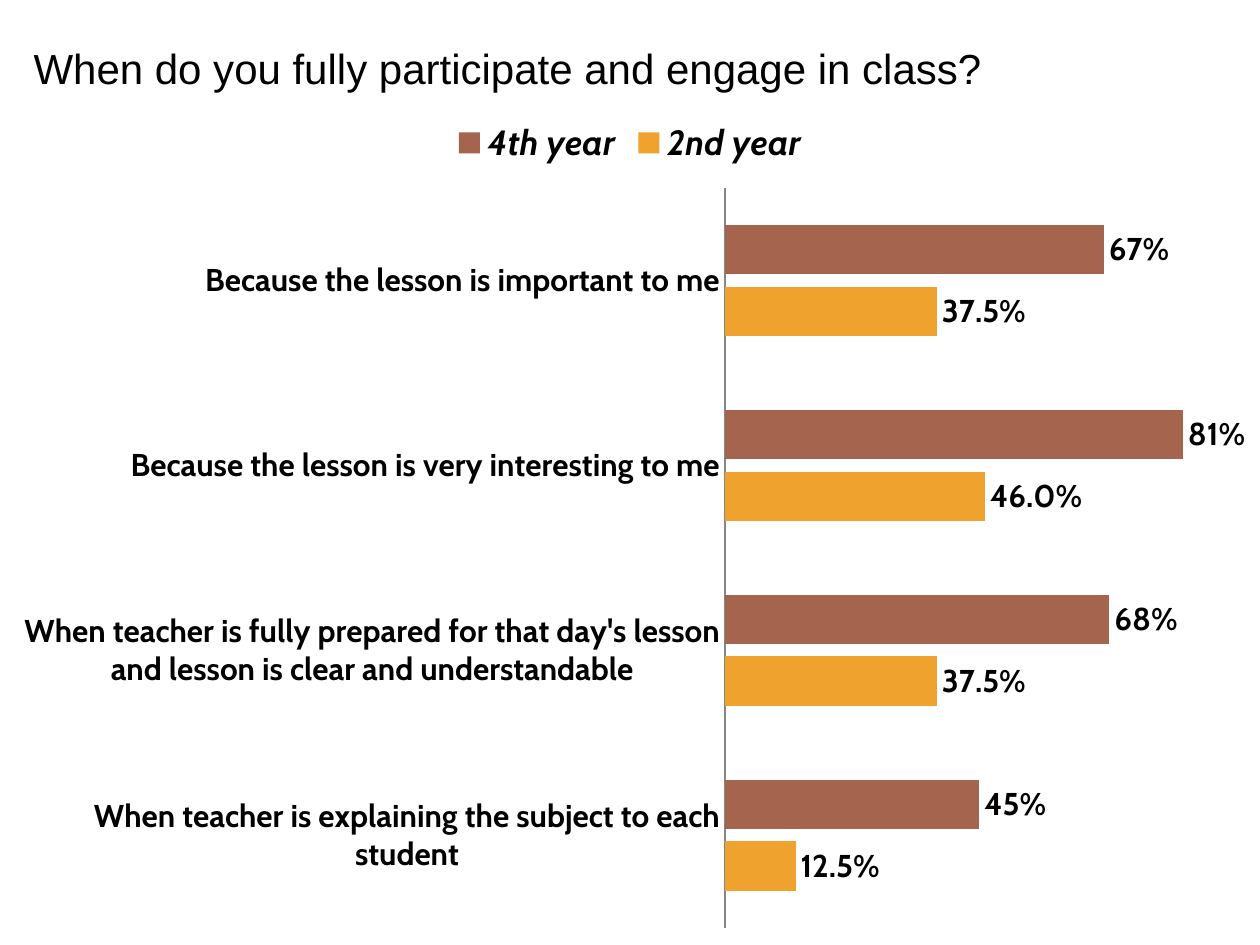
from lxml import etree
from pptx import Presentation, util as u
from pptx.chart.data import CategoryChartData
from pptx.dml.color import RGBColor
from pptx.enum import chart as kinds, text

# Content
TITLE = "When do you fully participate and engage in class?"
REASONS = [
    "When teacher is explaining the subject to each student",
    "When teacher is fully prepared for that day's lesson and lesson is clear and understandable",
    "Because the lesson is very interesting to me",
    "Because the lesson is important to me",
]
SERIES = [
    ("2nd year", (0.125, 0.375, 0.46, 0.375), "second", "0.0%"),
    ("4th year", (0.45, 0.68, 0.81, 0.67), "fourth", "0%"),
]
COLORS = {"ink": "000000", "axis": "868686", "second": "F0A22E", "fourth": "A5644E"}

# Places in px: left, top, width, height
SLIDE = (1260, 945)
TITLE_BOX = (21, 31, 983, 106)
CHART_BOX = (0, 105, 1260, 840)
PLOT_BOX = (725, 188, 509, 740)


def px(value):
    return u.Emu(round(value * 914400 / 126))


def color(name):
    return RGBColor.from_string(COLORS[name])


def style(font, size, face, bold=False, italic=False):
    font.size, font.name = u.Pt(size), face
    font.bold, font.italic = bold, italic
    font.color.rgb = color("ink")


def place_plot(chart):
    """Fix the inner plot area as fractions of the chart."""
    area = chart._chartSpace.chart.plotArea
    ns = area.nsmap["c"]
    for old in area.findall(f"{{{ns}}}layout"):
        area.remove(old)
    layout = etree.Element(f"{{{ns}}}layout")
    manual = etree.SubElement(layout, f"{{{ns}}}manualLayout")
    left, top, width, height = CHART_BOX
    values = {
        "layoutTarget": "inner", "xMode": "edge", "yMode": "edge",
        "x": (PLOT_BOX[0] - left) / width, "y": (PLOT_BOX[1] - top) / height,
        "w": PLOT_BOX[2] / width, "h": PLOT_BOX[3] / height,
    }
    for tag, value in values.items():
        etree.SubElement(manual, f"{{{ns}}}{tag}").set("val", str(value))
    area.insert(0, layout)


def add_title(page):
    box = page.shapes.title
    box.left, box.top, box.width, box.height = map(px, TITLE_BOX)
    frame = box.text_frame
    frame.word_wrap = False
    frame.auto_size = text.MSO_AUTO_SIZE.NONE
    frame.vertical_anchor = text.MSO_ANCHOR.TOP
    frame.margin_top = px(11)
    para = frame.paragraphs[0]
    para.alignment = text.PP_ALIGN.LEFT
    span = para.add_run()
    span.text = TITLE
    style(span.font, 24, "Arial")


def add_bars(page):
    data = CategoryChartData()
    data.categories = REASONS
    for name, values, _, _ in SERIES:
        data.add_series(name, values)
    chart = page.shapes.add_chart(
        kinds.XL_CHART_TYPE.BAR_CLUSTERED, *map(px, CHART_BOX), data).chart
    chart.has_title = False
    style(chart.font, 18, "Cabin")

    # Legend
    chart.has_legend = True
    chart.legend.position = kinds.XL_LEGEND_POSITION.TOP
    chart.legend.include_in_layout = False
    style(chart.legend.font, 20, "Cabin", bold=True, italic=True)

    # Axes
    reasons, share = chart.category_axis, chart.value_axis
    reasons.major_tick_mark = kinds.XL_TICK_MARK.NONE
    reasons.format.line.color.rgb = color("axis")
    reasons.format.line.width = u.Pt(0.75)
    style(reasons.tick_labels.font, 18, "Cabin", bold=True)
    share.minimum_scale, share.maximum_scale = 0, 0.9
    share.has_major_gridlines = False
    share.visible = False

    # Bars and their labels
    plot = chart.plots[0]
    plot.gap_width, plot.overlap = 150, -25
    plot.vary_by_categories = False
    for series, (_, _, fill, number_format) in zip(plot.series, SERIES):
        series.format.fill.solid()
        series.format.fill.fore_color.rgb = color(fill)
        labels = series.data_labels
        labels.show_value = True
        labels.number_format = number_format
        labels.number_format_is_linked = False
        labels.position = kinds.XL_LABEL_POSITION.OUTSIDE_END
        style(labels.font, 18, "Cabin", bold=True)
    place_plot(chart)


def main():
    deck = Presentation()
    deck.slide_width, deck.slide_height = map(px, SLIDE)
    page = deck.slides.add_slide(deck.slide_layouts[5])
    add_title(page)
    add_bars(page)
    deck.save("out.pptx")


if __name__ == "__main__":
    main()
